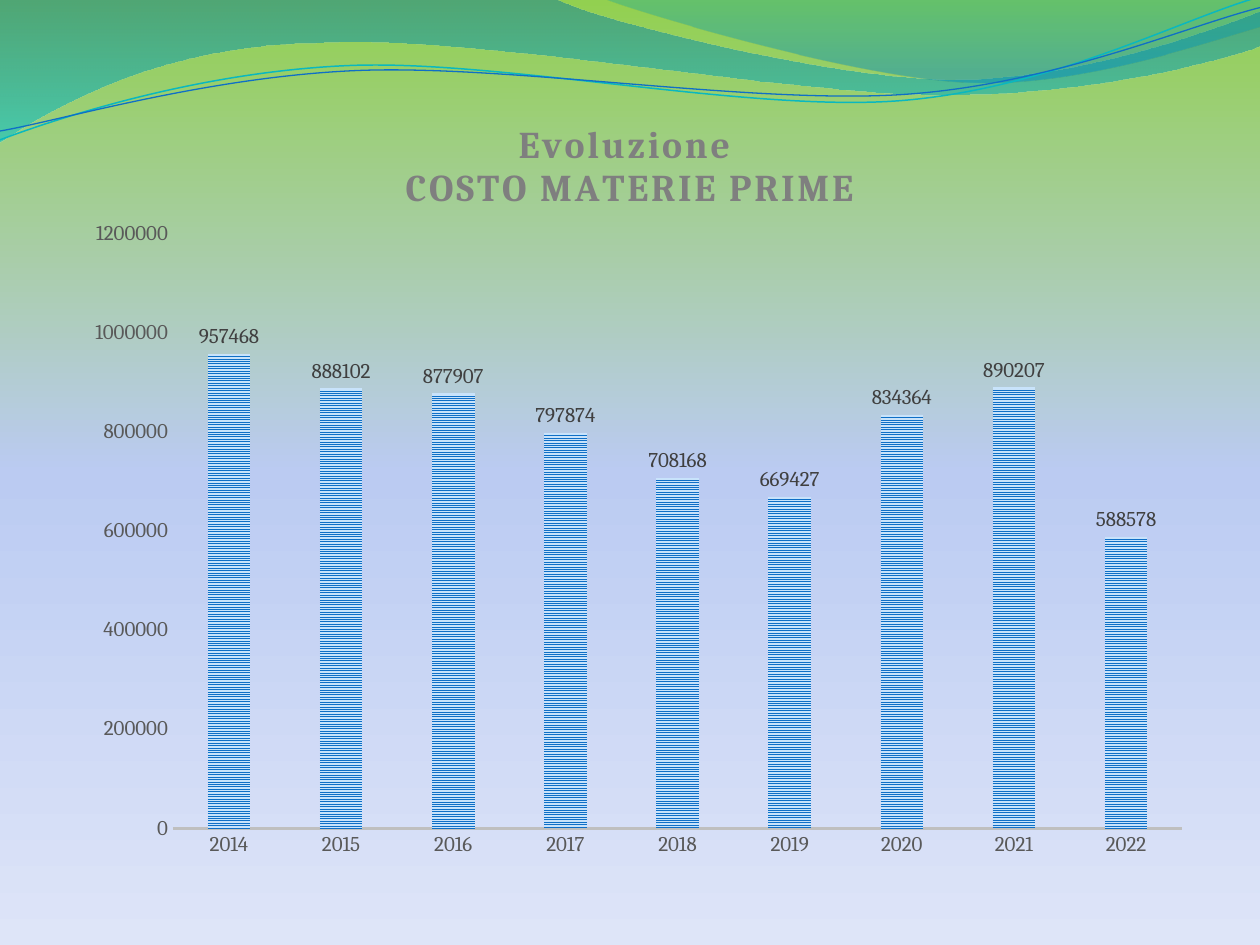
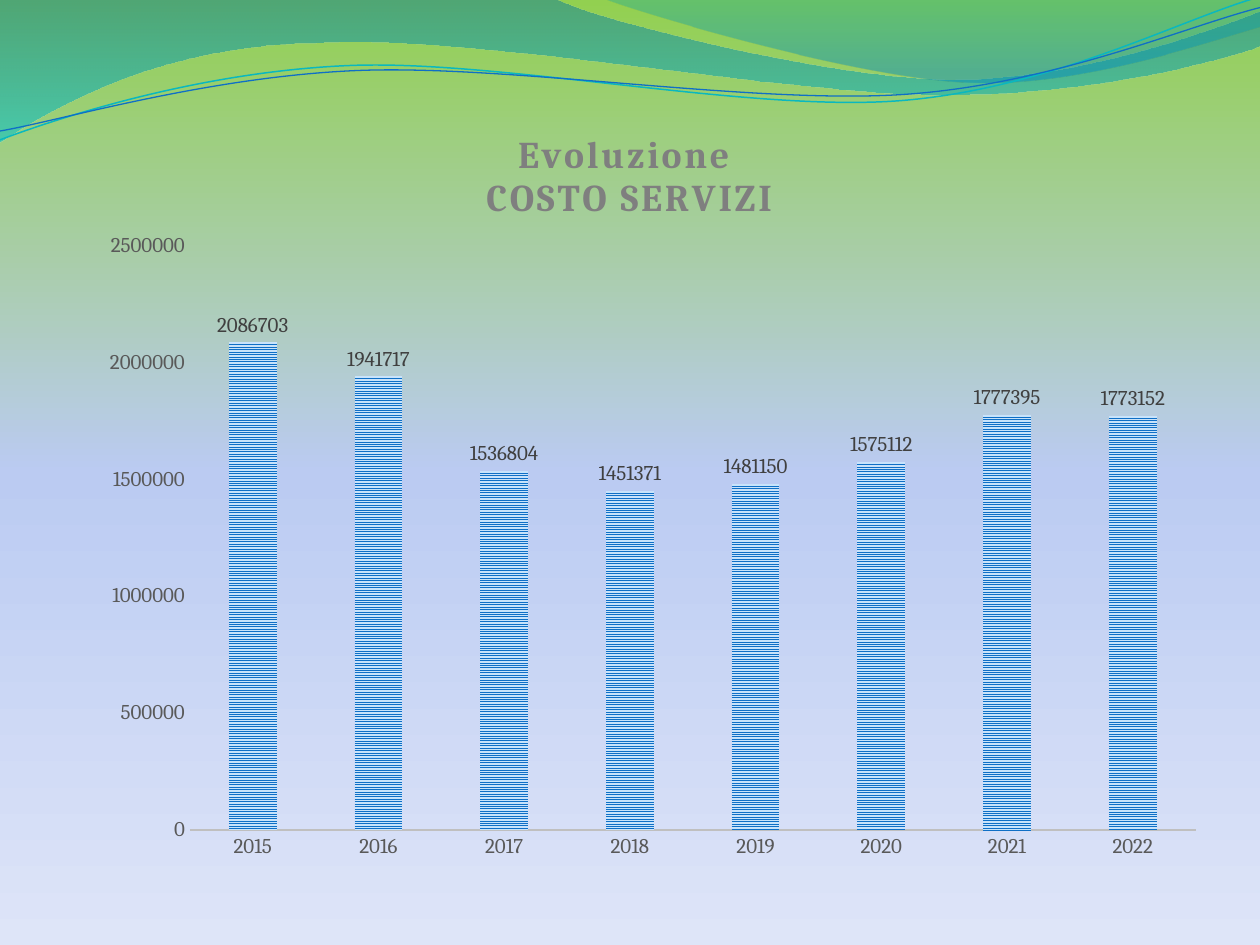
"""Build two slides that show the yearly trend of costs under a wave header."""
from math import cos, radians, sin
from lxml.etree import SubElement
from pptx import Presentation
from pptx.chart.data import CategoryChartData
from pptx.dml.color import RGBColor
from pptx.enum.chart import XL_CHART_TYPE, XL_LABEL_POSITION, XL_TICK_MARK
from pptx.enum.dml import MSO_PATTERN
from pptx.oxml.ns import qn
from pptx.util import Cm, Pt

COLORS = {
    "meadow": "92D050", "sky": "BBCBF2", "mist": "DEE5F8",
    "deep_blue": "0074A1", "turquoise": "00C6CF",
    "teal": "00A1A9", "lagoon": "008BBF",
    "cyan": "0AB8BF", "blue": "0F6FC6", "pale_blue": "C8E3FB",
    "title": "7F7F7F", "axis_text": "595959", "label_text": "404040",
    "axis_line": "BFBFBF", "black": "000000",
}
FONT = "Cambria"
WAVE_UNIT = Cm(0.0254)
RIPPLE_TILT = 357.3

BACKGROUND = [(0, "meadow", 100), (50, "sky", 100), (100, "mist", 100)]
BANDS = [
    ([(0, -1), (440, -1), (476, 17, 664, 63, 758, 63),
      (853, 63, 958, 26, 1000, 9), (1001, 36),
      (983, 44, 870, 76, 746, 75), (622, 75, 382, 28, 257, 34),
      (129, 35, 46, 83, -1, 113), (0, -1)],
     [(0, "deep_blue", 45), (100, "turquoise", 55)]),
    ([(479, -1), (509, 11, 682, 62, 769, 65),
      (856, 69, 961, 32, 1000, 21), (1000, 0), (479, -1)],
     [(0, "teal", 30), (80, "lagoon", 45)]),
]
RIPPLES = [
    ([(0, 111), (48, 93, 158, 57, 277, 52), (395, 47, 593, 89, 713, 80),
      (833, 71, 938, 15, 998, -2)], (499, 57.5), "cyan", 0.85),
    ([(0, 104), (47, 96, 164, 61, 283, 56), (403, 51, 597, 83, 717, 75),
      (836, 67, 941, 21, 1000, 6)], (499.5, 59), "blue", 0.75),
]
COSTS = [
    {"title": "COSTO MATERIE PRIME", "first_year": 2014,
     "values": [957468, 888102, 877907, 797874, 708168, 669427, 834364,
                890207, 588578],
     "scale": {"minimum_scale": 0, "maximum_scale": 1200000,
               "major_unit": 200000},
     "box": (Cm(1.27), Cm(1.93), Cm(22.86), Cm(15.65)),
     "plot": {"x": 0.097, "y": 0.178, "w": 0.89, "h": 0.766}},
    {"title": "COSTO SERVIZI", "first_year": 2015,
     "values": [2086703, 1941717, 1536804, 1451371, 1481150, 1575112,
                1777395, 1773152],
     "scale": {"minimum_scale": 0, "maximum_scale": 2500000,
               "major_unit": 500000},
     "box": (Cm(1.27), Cm(2.13), Cm(22.86), Cm(15.44)),
     "plot": {"x": 0.112, "y": 0.183, "w": 0.888, "h": 0.763}},
]


def rgb(name):
    """Return the named colour."""
    return RGBColor.from_string(COLORS[name])


def set_all(target, values):
    """Set each attribute in values on the target."""
    for key, value in values.items():
        setattr(target, key, value)


def style_font(font, size, color, bold=False):
    """Give a font the shared face with its size and colour."""
    set_all(font, {"name": FONT, "size": Pt(size), "bold": bold})
    font.color.rgb = rgb(color)


def fill_gradient(fill, owner, stops):
    """Fill from top to bottom with (position, colour, opacity) stops."""
    fill.gradient()
    fill.gradient_angle = 270
    stop_list = owner.find(".//" + qn("a:gsLst"))
    for old_stop in list(stop_list):
        stop_list.remove(old_stop)
    for position, color, opacity in stops:
        stop = SubElement(stop_list, qn("a:gs"), pos=str(position * 1000))
        tone = SubElement(stop, qn("a:srgbClr"), val=COLORS[color])
        if opacity < 100:
            SubElement(tone, qn("a:alpha"), val=str(opacity * 1000))


def pairs(segment):
    """Split a flat segment into its points."""
    return list(zip(segment[::2], segment[1::2]))


def untilt(point, center):
    """Turn a point about the center against the ripple tilt."""
    angle = radians(-RIPPLE_TILT)
    dx, dy = point[0] - center[0], point[1] - center[1]
    return (center[0] + dx * cos(angle) - dy * sin(angle),
            center[1] + dx * sin(angle) + dy * cos(angle))


def bend(outline, segments):
    """Join each three lines of a curved segment into one cubic curve."""
    lines = iter(outline.findall(qn("a:lnTo")))
    for segment in segments:
        group = [next(lines) for _ in pairs(segment)]
        if len(group) == 3:
            curve = SubElement(outline, qn("a:cubicBezTo"))
            outline.replace(group[0], curve)
            curve.extend([line[0] for line in group])
            for line in group[1:]:
                outline.remove(line)


def add_wave(slide, left, top, segments, center=None):
    """Draw a closed band, or an open tilted ripple about its center."""
    points = [point for segment in segments for point in pairs(segment)]
    if center:
        points = [untilt(point, center) for point in points]
    points = [(x * WAVE_UNIT, y * WAVE_UNIT) for x, y in points]
    builder = slide.shapes.build_freeform(*points[0])
    builder.add_line_segments(points[1:], close=center is None)
    wave = builder.convert_to_shape(left, top)
    bend(wave._element.find(".//" + qn("a:path")), segments[1:])
    wave.rotation = RIPPLE_TILT if center else 0
    wave.shadow.inherit = False
    return wave


def add_header(slide, left, top):
    """Draw the translucent bands and the thin ripples over them."""
    waves = []
    for segments, stops in BANDS:
        band = add_wave(slide, left, top, segments)
        fill_gradient(band.fill, band._element, stops)
        band.line.fill.background()
        waves.append(band)
    for segments, center, color, width in RIPPLES:
        ripple = add_wave(slide, left, top, segments, center)
        ripple.fill.background()
        ripple.line.color.rgb = rgb(color)
        ripple.line.width = Pt(width)
        waves.append(ripple)
    return waves


def share_on_master(master, waves):
    """Move the header from its slide to the master, with free ids."""
    tree = master.shapes._spTree
    next_id = max(shape.shape_id for shape in master.shapes) + 1
    for shape_id, wave in enumerate(waves, next_id):
        wave._element.nvSpPr.cNvPr.set("id", str(shape_id))
        tree.append(wave._element)


def add_title(chart, cost_title):
    """Write the two centred title lines of the chart."""
    frame = chart.chart_title.text_frame
    lines = [frame.paragraphs[0], frame.add_paragraph()]
    for line, text in zip(lines, ("Evoluzione ", cost_title)):
        run = line.add_run()
        run.text = text
        style_font(run.font, 21.6, "title", True)
        run._r.get_or_add_rPr().set("spc", "150")
    chart.chart_title.include_in_layout = False


def place_plot(chart, plot):
    """Fix the inner plot area as fractions of the chart."""
    area = chart._chartSpace.find(".//" + qn("c:plotArea"))
    layout = area.find(qn("c:layout"))
    if layout is None:
        layout = SubElement(area, qn("c:layout"))
        area.insert(0, layout)
    manual = SubElement(layout, qn("c:manualLayout"))
    settings = {"layoutTarget": "inner", "xMode": "edge", "yMode": "edge", **plot}
    for tag, value in settings.items():
        SubElement(manual, qn("c:" + tag), val=str(value))


def style_axes(chart, scale):
    """Style both axes and apply the scale to the value axis."""
    for axis in (chart.category_axis, chart.value_axis):
        set_all(axis, {"major_tick_mark": XL_TICK_MARK.NONE,
                       "minor_tick_mark": XL_TICK_MARK.NONE,
                       "has_major_gridlines": False})
        style_font(axis.tick_labels.font, 12, "axis_text")
    chart.category_axis.format.line.color.rgb = rgb("axis_line")
    chart.category_axis.format.line.width = Pt(1.5)
    chart.value_axis.format.line.fill.background()
    set_all(chart.value_axis, scale)


def style_columns(plot):
    """Give the columns their stripes, spacing and value labels."""
    set_all(plot, {"gap_width": 164, "overlap": -22,
                   "vary_by_categories": False, "has_data_labels": True})
    stripes = plot.series[0].format.fill
    stripes.patterned()
    stripes.pattern = MSO_PATTERN.NARROW_HORIZONTAL
    stripes.fore_color.rgb = rgb("blue")
    stripes.back_color.rgb = rgb("pale_blue")
    set_all(plot.data_labels, {"show_value": True,
                               "position": XL_LABEL_POSITION.OUTSIDE_END})
    style_font(plot.data_labels.font, 12, "label_text")


def add_cost_chart(slide, cost):
    """Place the column chart of one cost in its box."""
    data = CategoryChartData()
    data.categories = [str(cost["first_year"] + i) for i in range(len(cost["values"]))]
    data.add_series("Series 1", cost["values"])
    chart = slide.shapes.add_chart(
        XL_CHART_TYPE.COLUMN_CLUSTERED, *cost["box"], data).chart
    chart.has_legend = False
    style_font(chart.font, 10, "black")
    add_title(chart, cost["title"])
    style_axes(chart, cost["scale"])
    style_columns(chart.plots[0])
    place_plot(chart, cost["plot"])


def main():
    """Build and save the presentation."""
    deck = Presentation()
    set_all(deck, {"slide_width": Cm(25.4), "slide_height": Cm(19.05)})
    master = deck.slide_master
    fill_gradient(master.background.fill, master._element, BACKGROUND)
    slides = [deck.slides.add_slide(deck.slide_layouts[6]) for _ in COSTS]
    share_on_master(master, add_header(slides[0], 0, 0))
    for slide, cost in zip(slides, COSTS):
        add_cost_chart(slide, cost)
    deck.save("out.pptx")


if __name__ == "__main__":
    main()
